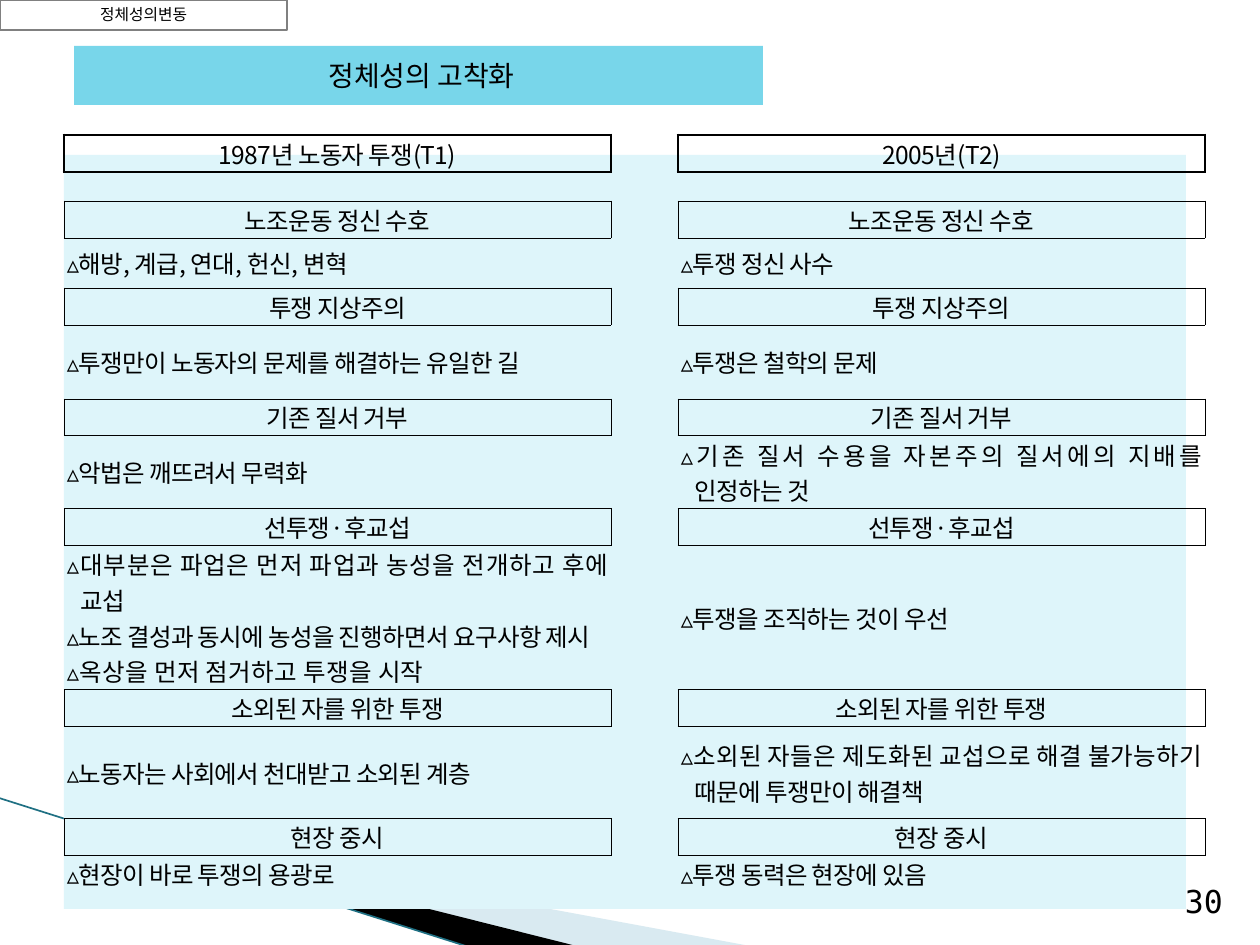
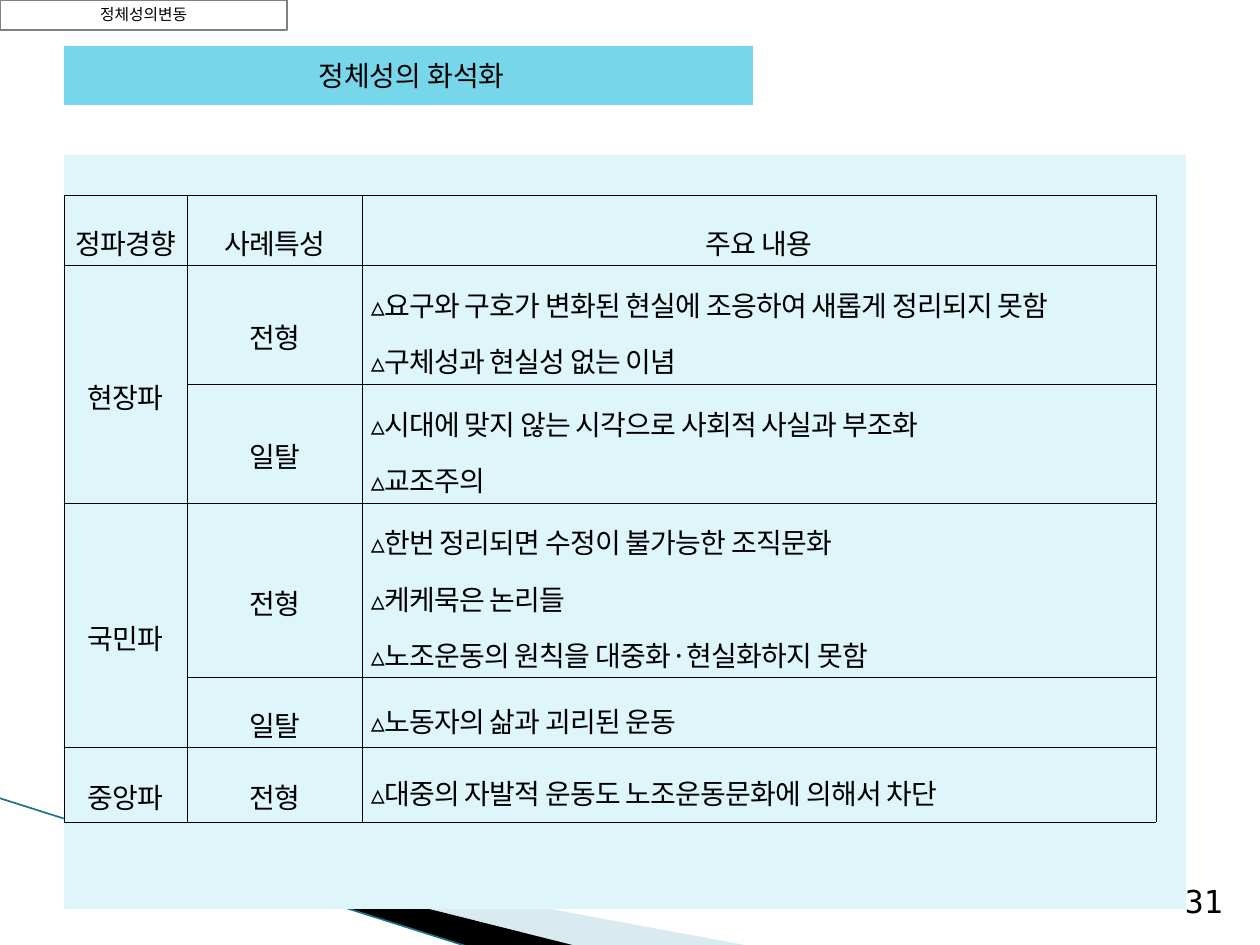
from dataclasses import dataclass

from lxml import etree
from pptx import Presentation
from pptx.dml.color import RGBColor
from pptx.enum.shapes import MSO_CONNECTOR, MSO_SHAPE
from pptx.enum.text import MSO_ANCHOR, PP_ALIGN
from pptx.oxml.ns import qn
from pptx.util import Pt

# Shared style
PX = 914400 / 126
HANGUL_FONT = "Noto Sans CJK KR"
MONO_FONT = "DejaVu Sans Mono"
BLACK, WHITE, GREY = "000000", "FFFFFF", "808080"
TITLE_BLUE, PANEL_BLUE = "78D6EA", "DEF5FA"
WEDGE_BLUE, WEDGE_EDGE = "A0CBDC", "1F7083"
THIN, THICK = 0.28, 1.7
PLAIN_TABLE = "{2D5ABB26-0587-4C30-8999-92F81FD0307C}"


@dataclass(frozen=True)
class Box:
    left: int
    top: int
    width: int
    height: int

    def emu(self) -> tuple:
        return tuple(px(n) for n in (self.left, self.top, self.width, self.height))


@dataclass(frozen=True)
class Point:
    """A line of table text; "|" parts the runs."""
    text: str
    spacing: float = -0.4


@dataclass(frozen=True)
class Theme:
    """A heading that both periods share, and what each period said."""
    label: str
    in_1987: tuple
    in_2005: tuple
    height: int


@dataclass(frozen=True)
class Case:
    faction: str
    trait: str
    points: tuple
    height: int
    faction_rows: int = 1


THEMES = [
    Theme("노조운동 정신 수호", (Point("▵해방|, |계급|, |연대|, |헌신|, |변혁"),),
          (Point("▵투쟁 정신 사수"),), 50),
    Theme("투쟁 지상주의", (Point("▵투쟁만이 노동자의 문제를 해결하는 유일한 길"),),
          (Point("▵투쟁은 철학의 문제"),), 74),
    Theme("기존 질서 거부", (Point("▵악법은 깨뜨려서 무력화"),),
          (Point("▵기존 질서 수용을 자본주의 질서에의 지배를 인정하는 것"),), 73),
    Theme("선투쟁|·|후교섭",
          (Point("▵대부분은 파업은 먼저 파업과 농성을 전개하고 후에 교섭"),
           Point("▵노조 결성과 동시에 농성을 진행하면서 요구사항 제시"),
           Point("▵옥상을 먼저 점거하고 투쟁을 시작", 0.2)),
          (Point("▵투쟁을 조직하는 것이 우선"),), 144),
    Theme("소외된 자를 위한 투쟁", (Point("▵노동자는 사회에서 천대받고 소외된 계층"),),
          (Point("▵소외된 자들은 제도화된 교섭으로 해결 불가능하기 때문에 투쟁만이 해결책"),), 92),
    Theme("현장 중시", (Point("▵현장이 바로 투쟁의 용광로"),),
          (Point("▵투쟁 동력은 현장에 있음"),), 37),
]

CASES = [
    Case("현장파", "전형", (Point("▵요구와 구호가 변화된 현실에 조응하여 새롭게 정리되지 못함"),
                       Point("▵구체성과 현실성 없는 이념")), 119, 2),
    Case("", "일탈", (Point("▵시대에 맞지 않는 시각으로 사회적 사실과 부조화"),
                    Point("▵교조주의")), 119),
    Case("국민파", "전형", (Point("▵한번 정리되면 수정이 불가능한 조직문화"),
                       Point("▵케케묵은 논리들"),
                       Point("▵노조운동의 원칙을 대중화|·|현실화하지 못함")), 174, 2),
    Case("", "일탈", (Point("▵노동자의 삶과 괴리된 운동"),), 70),
    Case("중앙파", "전형", (Point("▵대중의 자발적 운동도 노조운동문화에 의해서 차단"),), 75),
]


def px(length: float) -> int:
    return round(length * PX)


def color(value: str) -> RGBColor:
    return RGBColor.from_string(value)


# Text
def write(paragraph, text: str, *, size: int, font: str = "", spacing: float = 0,
          align=PP_ALIGN.CENTER, line: float = 1, hang: int = 0) -> None:
    paragraph.alignment = align
    paragraph.line_spacing = line
    if hang:
        properties = paragraph._p.get_or_add_pPr()
        properties.set("marL", str(px(hang)))
        properties.set("indent", str(-px(hang)))
    for part in text.split("|"):
        run = paragraph.add_run()
        run.text = part
        run.font.size = Pt(size)
        run.font.color.rgb = color(BLACK)
        korean = any("가" <= letter <= "힣" for letter in part)
        run.font.name = font or (MONO_FONT if korean else HANGUL_FONT)
        run_format = run._r.get_or_add_rPr()
        if spacing:
            run_format.set("spc", str(round(spacing * 100)))
        etree.SubElement(run_format, qn("a:ea"), typeface=HANGUL_FONT)


# Shapes
def add_band(slide, box: Box, fill: str, text: str = "", *, size: int = 16,
             outline: str = "", line: float = 1) -> None:
    band = slide.shapes.add_shape(MSO_SHAPE.RECTANGLE, *box.emu())
    band.shadow.inherit = False
    band.fill.solid()
    band.fill.fore_color.rgb = color(fill)
    if outline:
        band.line.color.rgb = color(outline)
        band.line.width = Pt(0.75)
    else:
        band.line.fill.background()
    if text:
        band.text_frame.vertical_anchor = MSO_ANCHOR.MIDDLE
        write(band.text_frame.paragraphs[0], text, size=size, font=HANGUL_FONT, line=line)


def add_wedge(slide, corners: list, fill: str, opacity: int = 100) -> None:
    builder = slide.shapes.build_freeform(*corners[0], scale=PX)
    builder.add_line_segments(corners[1:], close=True)
    wedge = builder.convert_to_shape()
    wedge.shadow.inherit = False
    wedge.fill.solid()
    wedge.fill.fore_color.rgb = color(fill)
    wedge.line.fill.background()
    if opacity < 100:
        tint = wedge._element.spPr.find(qn("a:solidFill"))[0]
        etree.SubElement(tint, qn("a:alpha"), val=str(opacity * 1000))


def add_base(presentation, page: int, title: str, title_left: int):
    slide = presentation.slides.add_slide(presentation.slide_layouts[6])
    # Corner wedges
    add_wedge(slide, [(69, 820), (750, 946), (575, 946), (69, 819)], WEDGE_BLUE, 40)
    add_wedge(slide, [(67, 818), (576, 946), (469, 947), (68, 819)], BLACK)
    edge = slide.shapes.add_connector(MSO_CONNECTOR.STRAIGHT,
                                      px(-1), px(798), px(469), px(947))
    edge.line.color.rgb = color(WEDGE_EDGE)
    edge.line.width = Pt(0.95)
    etree.SubElement(edge._element.spPr, qn("a:effectLst"))
    # Page number
    number = slide.shapes.add_textbox(*Box(1166, 869, 76, 64).emu()).text_frame
    number.word_wrap = True
    number.vertical_anchor = MSO_ANCHOR.MIDDLE
    write(number.paragraphs[0], str(page), size=18, font=MONO_FONT)
    # Title and panel
    add_band(slide, Box(title_left, 46, 689, 59), TITLE_BLUE, title)
    add_band(slide, Box(64, 155, 1122, 754), PANEL_BLUE)
    return slide


def add_section_tag(slide) -> None:
    add_band(slide, Box(0, 0, 287, 30), WHITE, "정체성의변동", size=9, outline=GREY, line=0.9)


# Tables
def add_plain_table(slide, left: int, top: int, columns: list, rows: list):
    box = Box(left, top, sum(columns), sum(rows))
    table = slide.shapes.add_table(len(rows), len(columns), *box.emu()).table
    table._tbl.tblPr.find(qn("a:tableStyleId")).text = PLAIN_TABLE
    table.first_row = table.horz_banding = False
    for column, width in zip(table.columns, columns):
        column.width = px(width)
    for row, height in zip(table.rows, rows):
        row.height = px(height)
    return table


def set_borders(cell, widths: dict) -> None:
    for side in "LRTB":
        if widths.get(side):
            border = etree.SubElement(cell._tc.get_or_add_tcPr(), qn(f"a:ln{side}"),
                                      w=str(Pt(widths[side])))
            ink = etree.SubElement(border, qn("a:solidFill"))
            etree.SubElement(ink, qn("a:srgbClr"), val=BLACK)


def fill_cell(cell, points: tuple, borders: dict, *, margin_x: int, margin_y: int,
              **text_format) -> None:
    set_borders(cell, borders)
    cell.fill.background()
    cell.vertical_anchor = MSO_ANCHOR.MIDDLE
    cell.margin_left = cell.margin_right = px(margin_x)
    cell.margin_top = cell.margin_bottom = px(margin_y)
    frame = cell.text_frame
    for index, point in enumerate(points):
        paragraph = frame.add_paragraph() if index else frame.paragraphs[0]
        write(paragraph, point.text, spacing=point.spacing, **text_format)
    if not points:
        etree.SubElement(frame.paragraphs[0]._p, qn("a:endParaRPr"), sz="1000")


def all_sides(width: float) -> dict:
    return dict.fromkeys("LRTB", width)


# Slide 30: two periods side by side, with boxed headings on every other row
def build_hardening(presentation) -> None:
    slide = add_base(presentation, 30, " 정체성의 고착화", 74)
    heading_height = 37
    rows = [((Point("1987|년 노동자 투쟁|(T1)"),), (Point("2005|년|(T2)"),), heading_height),
            ((), (), 29)]
    for theme in THEMES:
        label = (Point(theme.label),)
        rows.append((label, label, heading_height))
        rows.append((theme.in_1987, theme.in_2005, theme.height))
    table = add_plain_table(slide, 64, 135, [547, 67, 527], [row[2] for row in rows])

    def box_width(row: int) -> float:
        return THICK if row == 0 else THIN if row < len(rows) else 0

    for r, (first, second, _) in enumerate(rows):
        boxed = r % 2 == 0
        if boxed:
            borders = all_sides(box_width(r))
            gap_borders = dict.fromkeys("LR", box_width(r))
        else:
            borders = {"T": box_width(r - 1), "B": box_width(r + 1)}
            gap_borders = {}
        for c, points in enumerate((first, (), second)):
            fill_cell(table.cell(r, c), points, gap_borders if c == 1 else borders,
                      margin_x=3, margin_y=0, size=14, hang=0 if boxed else 14,
                      align=PP_ALIGN.CENTER if boxed else PP_ALIGN.JUSTIFY)
    add_section_tag(slide)


# Slide 31: factions, their cases and main points, under one open row
def build_fossilising(presentation) -> None:
    slide = add_base(presentation, 31, " 정체성의 화석화", 64)
    open_row = Case("", "", (), 195)
    header = Case("정파경향", "사례특성", (Point("주요 내용"),), 70)
    cases = [open_row, header] + CASES
    table = add_plain_table(slide, 64, 0, [123, 175, 794], [case.height for case in cases])
    for r, case in enumerate(cases):
        faction = (Point(case.faction),) if case.faction else ()
        trait = (Point(case.trait),) if case.trait else ()
        borders = all_sides(THIN) if r else {"B": THIN}
        for c, points in enumerate((faction, trait, case.points)):
            listed = r > 1 and c == 2
            fill_cell(table.cell(r, c), points, borders, margin_x=9, margin_y=2,
                      size=16, line=1.4 if listed else 1.6,
                      align=PP_ALIGN.JUSTIFY if listed else PP_ALIGN.CENTER)
    table.cell(0, 0).merge(table.cell(0, 2))
    for r, case in enumerate(cases):
        if case.faction_rows > 1:
            table.cell(r, 0).merge(table.cell(r + case.faction_rows - 1, 0))
    add_section_tag(slide)


def main() -> None:
    presentation = Presentation()
    presentation.slide_width, presentation.slide_height = px(1260), px(945)
    build_hardening(presentation)
    build_fossilising(presentation)
    presentation.save("out.pptx")


if __name__ == "__main__":
    main()
